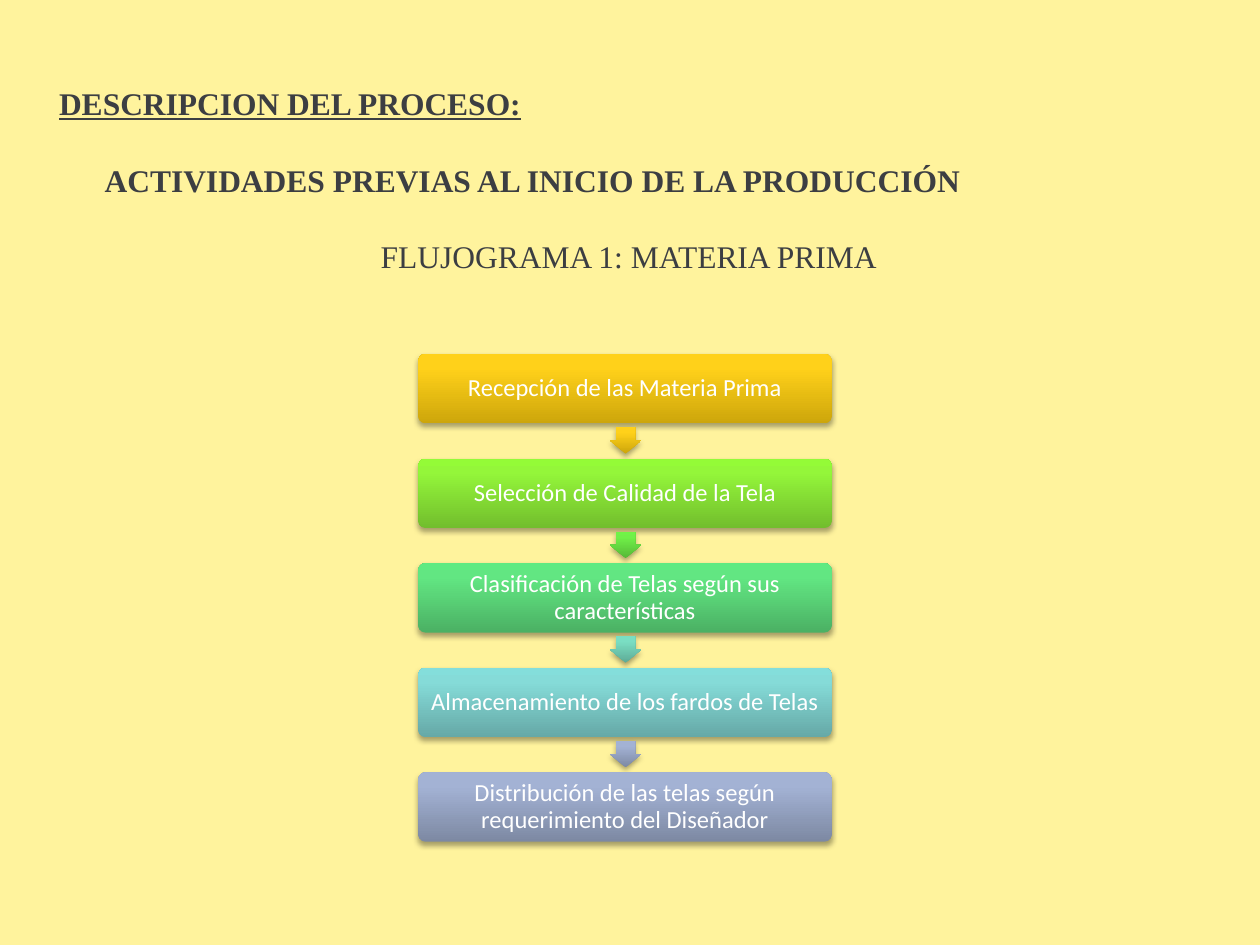
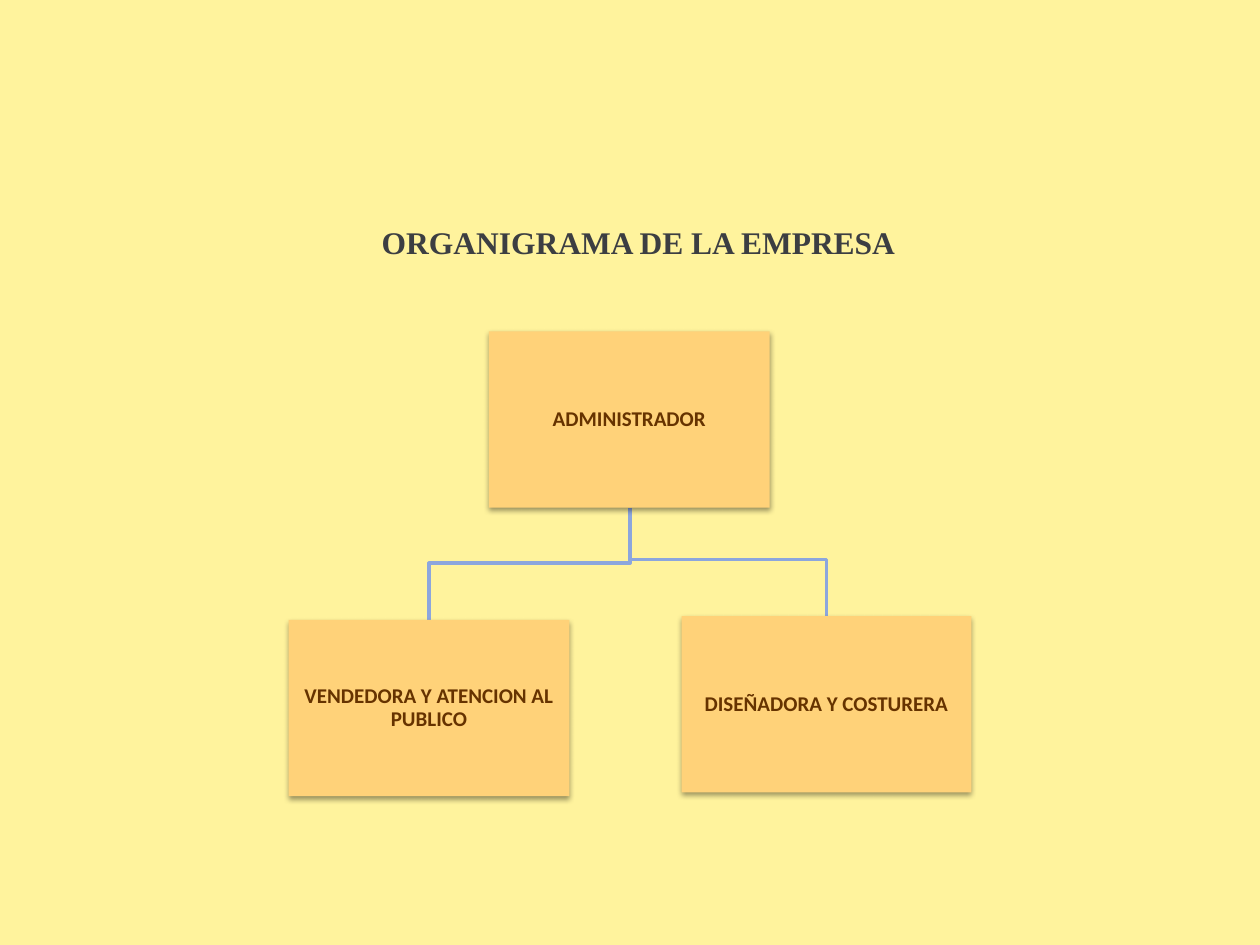
from copy import deepcopy

from lxml.etree import SubElement
from pptx import Presentation
from pptx.dml.color import RGBColor
from pptx.enum.shapes import MSO_SHAPE
from pptx.enum.text import MSO_ANCHOR, PP_ALIGN
from pptx.oxml.ns import qn
from pptx.util import Inches, Pt

BACKGROUND = RGBColor(0xFF, 0xF3, 0x9D)
HEADING = RGBColor(0x3C, 0x3E, 0x42)
WHITE = RGBColor(0xFF, 0xFF, 0xFF)
CARD = RGBColor(0xFF, 0xD2, 0x79)
CARD_TEXT = RGBColor(0x66, 0x33, 0x00)
BRANCH = RGBColor(0x8C, 0xA6, 0xDD)

GOLD = (RGBColor(0xCD, 0xA6, 0x0B), RGBColor(0xFF, 0xD1, 0x1A), RGBColor(0xFF, 0xD1, 0x1B))
LIME = (RGBColor(0x72, 0xBE, 0x2D), RGBColor(0x94, 0xF6, 0x3A), RGBColor(0x94, 0xFB, 0x37))
GREEN = (RGBColor(0x56, 0xB9, 0x37), RGBColor(0x70, 0xF0, 0x48), RGBColor(0x6F, 0xF5, 0x45))
MINT = (RGBColor(0x4B, 0xB1, 0x64), RGBColor(0x62, 0xE6, 0x82), RGBColor(0x60, 0xEA, 0x82))
TEAL = (RGBColor(0x5E, 0xAB, 0x96), RGBColor(0x7A, 0xDE, 0xC3), RGBColor(0x78, 0xE1, 0xC5))
AQUA = (RGBColor(0x66, 0xA9, 0xA7), RGBColor(0x85, 0xDB, 0xD8), RGBColor(0x84, 0xDE, 0xDB))
SLATE = (RGBColor(0x7D, 0x89, 0xA3), RGBColor(0xA3, 0xB2, 0xD4), RGBColor(0xA3, 0xB3, 0xD6))
GRADIENT_POSITIONS = (0, 0.8, 1)

STEPS = [
    ("Recepción de las Materia Prima", GOLD, GOLD),
    ("Selección de Calidad de la Tela", LIME, GREEN),
    ("Clasificación de Telas según sus características", MINT, TEAL),
    ("Almacenamiento de los fardos de Telas", AQUA, SLATE),
    ("Distribución de las telas según requerimiento del Diseñador", SLATE, None),
]
MANAGER = ("ADMINISTRADOR", 3.88, 2.63, 2.23)
STAFF = [
    ("DISEÑADORA Y COSTURERA", 5.41, 4.89, 2.3),
    ("VENDEDORA Y ATENCION AL PUBLICO", 2.29, 4.92, 2.23),
]
CARD_HEIGHT = 1.4


def write(paragraph, text, font="Times New Roman", size=18, color=HEADING, bold=False,
          underline=False, align=PP_ALIGN.LEFT, line_spacing=None, space_before=0):
    paragraph.alignment = align
    paragraph.line_spacing = line_spacing
    paragraph.space_before = Pt(space_before)
    run = paragraph.add_run()
    run.text = text
    run.font.name = font
    run.font.size = Pt(size)
    run.font.color.rgb = color
    run.font.bold = bold
    run.font.underline = underline


class Deck:
    """Holds the shared style and draws on the current slide."""

    def __init__(self):
        self.presentation = Presentation()
        self.presentation.slide_width = Inches(10)
        self.presentation.slide_height = Inches(7.5)
        self.slide = None

    def add_slide(self):
        self.slide = self.presentation.slides.add_slide(self.presentation.slide_layouts[6])
        fill = self.slide.background.fill
        fill.solid()
        fill.fore_color.rgb = BACKGROUND

    def text_box(self, left, top, width, height, lines, inset=0.1):
        box = self.slide.shapes.add_textbox(Inches(left), Inches(top), Inches(width), Inches(height))
        frame = box.text_frame
        frame.word_wrap = True
        frame.margin_left = Inches(inset)
        for index, (text, style) in enumerate(lines):
            paragraph = frame.add_paragraph() if index else frame.paragraphs[0]
            write(paragraph, text, **style)

    def shape(self, kind, left, top, width, height, opacity, distance):
        shape = self.slide.shapes.add_shape(
            kind, Inches(left), Inches(top), Inches(width), Inches(height))
        shape.line.fill.background()
        shape.shadow.inherit = False
        effects = shape._element.spPr.find(qn("a:effectLst"))
        shadow = SubElement(effects, qn("a:outerShdw"), blurRad=str(Pt(3.1)),
                            dist=str(Pt(distance)), dir="5400000", rotWithShape="0")
        black = SubElement(shadow, qn("a:srgbClr"), val="000000")
        SubElement(black, qn("a:alpha"), val=str(opacity * 1000))
        return shape

    def gradient_shape(self, kind, left, top, width, height, colors, adjustments):
        shape = self.shape(kind, left, top, width, height, opacity=35, distance=1.8)
        for index, value in enumerate(adjustments):
            shape.adjustments[index] = value
        shape.fill.gradient()
        shape.fill.gradient_angle = 90
        stop_list = shape._element.spPr.find(qn("a:gradFill")).find(qn("a:gsLst"))
        stop_list.append(deepcopy(stop_list[0]))
        for stop, position, color in zip(shape.fill.gradient_stops, GRADIENT_POSITIONS, colors):
            stop.position = position
            stop.color.rgb = color
        return shape

    def label(self, shape, text, inset, **style):
        frame = shape.text_frame
        frame.word_wrap = True
        frame.vertical_anchor = MSO_ANCHOR.MIDDLE
        frame.margin_left = frame.margin_right = Inches(inset)
        frame.margin_top = frame.margin_bottom = Inches(inset)
        write(frame.paragraphs[0], text, font="Calibri", align=PP_ALIGN.CENTER,
              line_spacing=0.9, **style)

    def step(self, top, text, colors):
        shape = self.gradient_shape(MSO_SHAPE.ROUNDED_RECTANGLE, 3.32, top, 3.28, 0.55, colors, [0.1])
        self.label(shape, text, 0.07, size=14, color=WHITE)

    def step_arrow(self, top, colors):
        self.gradient_shape(MSO_SHAPE.DOWN_ARROW, 4.84, top, 0.25, 0.21, colors, [0.6, 0.5])

    def card(self, text, left, top, width):
        shape = self.shape(MSO_SHAPE.RECTANGLE, left, top, width, CARD_HEIGHT,
                           opacity=38, distance=1.6)
        shape.fill.solid()
        shape.fill.fore_color.rgb = CARD
        self.label(shape, text, 0.01, size=12, color=CARD_TEXT, bold=True)

    def branch(self, start_x, start_y, end_x, end_y):
        bend = end_y - 0.45
        points = [(start_x, bend), (end_x, bend), (end_x, end_y)]
        builder = self.slide.shapes.build_freeform(Inches(start_x), Inches(start_y))
        builder.add_line_segments([(Inches(x), Inches(y)) for x, y in points], close=False)
        line = builder.convert_to_shape()
        line.shadow.inherit = False
        line.fill.background()
        line.line.color.rgb = BRANCH
        line.line.width = Pt(2)


def build_flowchart(deck):
    deck.add_slide()
    deck.text_box(0.67, 1.23, 8.58, 1.31, [
        ("ACTIVIDADES PREVIAS AL INICIO DE LA PRODUCCIÓN", {"bold": True}),
        ("FLUJOGRAMA 1: MATERIA PRIMA", {"align": PP_ALIGN.CENTER, "space_before": 22}),
    ], inset=0.16)
    deck.text_box(0.37, 0.62, 5.12, 0.4,
                  [("DESCRIPCION DEL PROCESO:", {"bold": True, "underline": True})])
    for index, (text, colors, arrow_colors) in enumerate(STEPS):
        top = 2.81 + index * 0.83
        deck.step(top, text, colors)
        if arrow_colors:
            deck.step_arrow(top + 0.58, arrow_colors)


def build_organisation_chart(deck):
    deck.add_slide()
    manager_bottom = MANAGER[2] + CARD_HEIGHT
    for _, left, top, width in STAFF:
        deck.branch(5, manager_bottom, left + width / 2, top)
    for member in [MANAGER, *STAFF]:
        deck.card(*member)
    deck.text_box(1.93, 1.72, 6.06, 0.4,
                  [("ORGANIGRAMA DE LA EMPRESA", {"bold": True})], inset=1.1)


def main():
    deck = Deck()
    build_flowchart(deck)
    build_organisation_chart(deck)
    deck.presentation.save("out.pptx")


if __name__ == "__main__":
    main()
